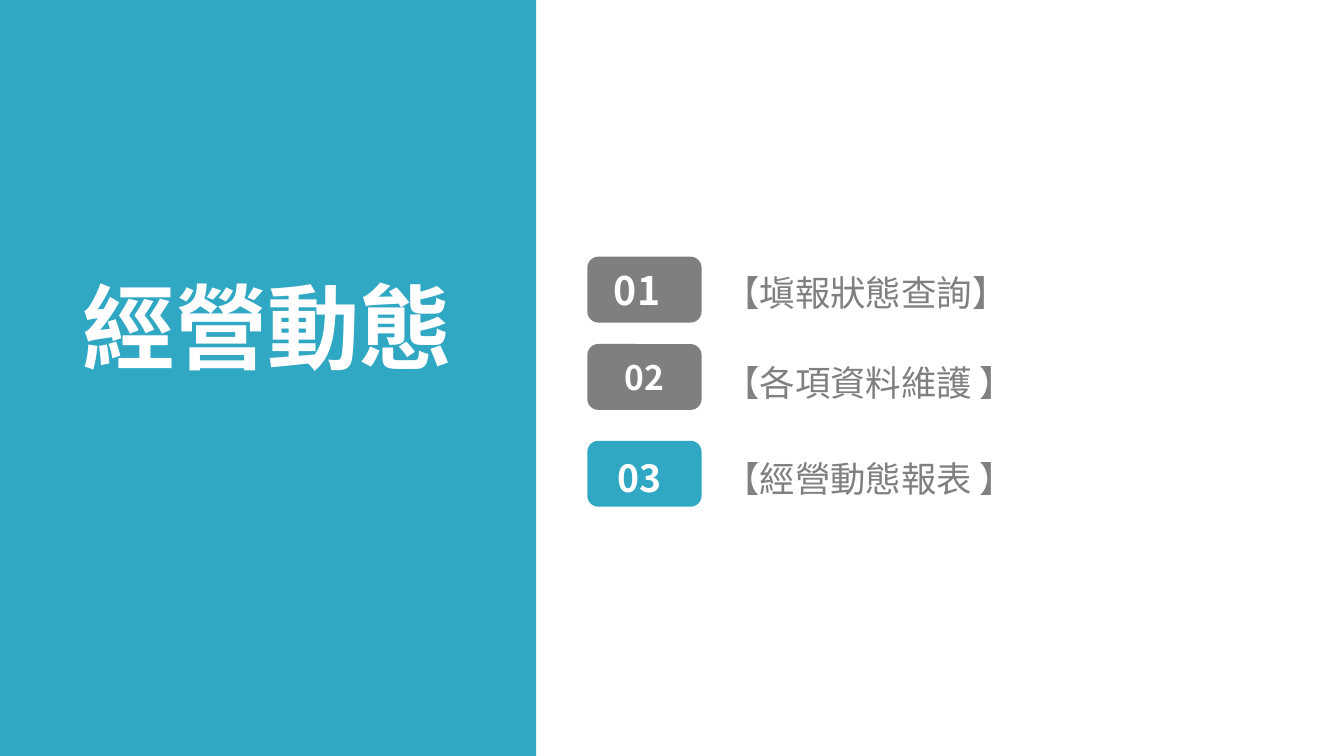
from lxml import etree
from pptx import Presentation
from pptx.dml.color import RGBColor
from pptx.enum.shapes import MSO_SHAPE as Shape
from pptx.enum.text import MSO_ANCHOR as Anchor, PP_ALIGN as Align
from pptx.oxml.ns import qn
from pptx.util import Inches, Pt

TEAL, GRAY, LABEL_GRAY, WHITE = "30A8C4", "7F7F7F", "808080", "FFFFFF"
CJK_FONT = "Noto Sans CJK SC"


def add_block(kind, left, top, width, height, fill=None):
    """Add a borderless shape, unfilled when no colour is given."""
    shape = slide.shapes.add_shape(
        kind, Inches(left), Inches(top), Inches(width), Inches(height))
    shape.shadow.inherit = False
    shape.line.fill.background()
    if fill:
        shape.fill.solid()
        shape.fill.fore_color.rgb = RGBColor.from_string(fill)
    else:
        shape.fill.background()
    return shape


def write(shape, text, color, frame_format, paragraph_format, font_format):
    """Fill a shape with one run, naming the East Asian font as well."""
    frame = shape.text_frame
    paragraph = frame.paragraphs[0]
    run = paragraph.add_run()
    run.text = text
    for target, values in ((frame, frame_format), (paragraph, paragraph_format),
                           (run.font, font_format)):
        for name, value in values.items():
            setattr(target, name, value)
    run.font.color.rgb = RGBColor.from_string(color)
    east_asian = etree.SubElement(run.font._element, qn("a:ea"))
    east_asian.set("typeface", CJK_FONT)


presentation = Presentation()
presentation.slide_width = Inches(10)
presentation.slide_height = Inches(10) * 9 // 16
slide = presentation.slides.add_slide(presentation.slide_layouts[6])

# Title panel, as tall as the slide
panel = add_block(Shape.RECTANGLE, 0, 0, 3.99, 5.62, TEAL)
panel.height = presentation.slide_height
title = slide.shapes.add_textbox(Inches(0.6), Inches(2.01), Inches(2.78), Inches(0.83))
no_margins = {f"margin_{side}": 0 for side in ("left", "top", "right", "bottom")}
write(title, "經營動態", WHITE, {**no_margins, "word_wrap": False},
      {"alignment": Align.CENTER},
      {"name": "Arial", "size": Pt(49.5), "bold": True})

# Agenda: number, badge top, badge colour, number box (left, top), number size,
# label, label top, label height
agenda = [
    ("01", 1.91, GRAY, (4.35, 1.87), 21, "【塡報狀態查詢】", 1.82, 0.5),
    ("02", 2.56, GRAY, None, 18, "【各項資料維護 】", 2.49, 0.56),
    ("03", 3.28, TEAL, (4.37, 3.27), 20, "【經營動態報表 】", 3.2, 0.5),
]
margins = {"margin_left": Inches(0.07), "margin_right": Inches(0.07),
           "margin_top": Inches(0.04), "margin_bottom": Inches(0.04),
           "word_wrap": True}
for number, badge_top, color, number_at, size, label, label_top, label_height in agenda:
    holder = add_block(Shape.ROUNDED_RECTANGLE, 4.37, badge_top, 0.85, 0.49, color)
    if number_at:
        holder = add_block(Shape.OVAL, *number_at, 0.78, 0.57)
    write(holder, number, WHITE, {**margins, "vertical_anchor": Anchor.MIDDLE},
          {"alignment": Align.CENTER},
          {"name": CJK_FONT, "size": Pt(size), "bold": True})

    label_box = slide.shapes.add_textbox(
        Inches(5.32), Inches(label_top), Inches(2.84), Inches(label_height))
    write(label_box, label, LABEL_GRAY, margins,
          {"line_spacing": 1.5, "space_before": Pt(5.6)},
          {"name": CJK_FONT, "size": Pt(19)})

presentation.save("out.pptx")
